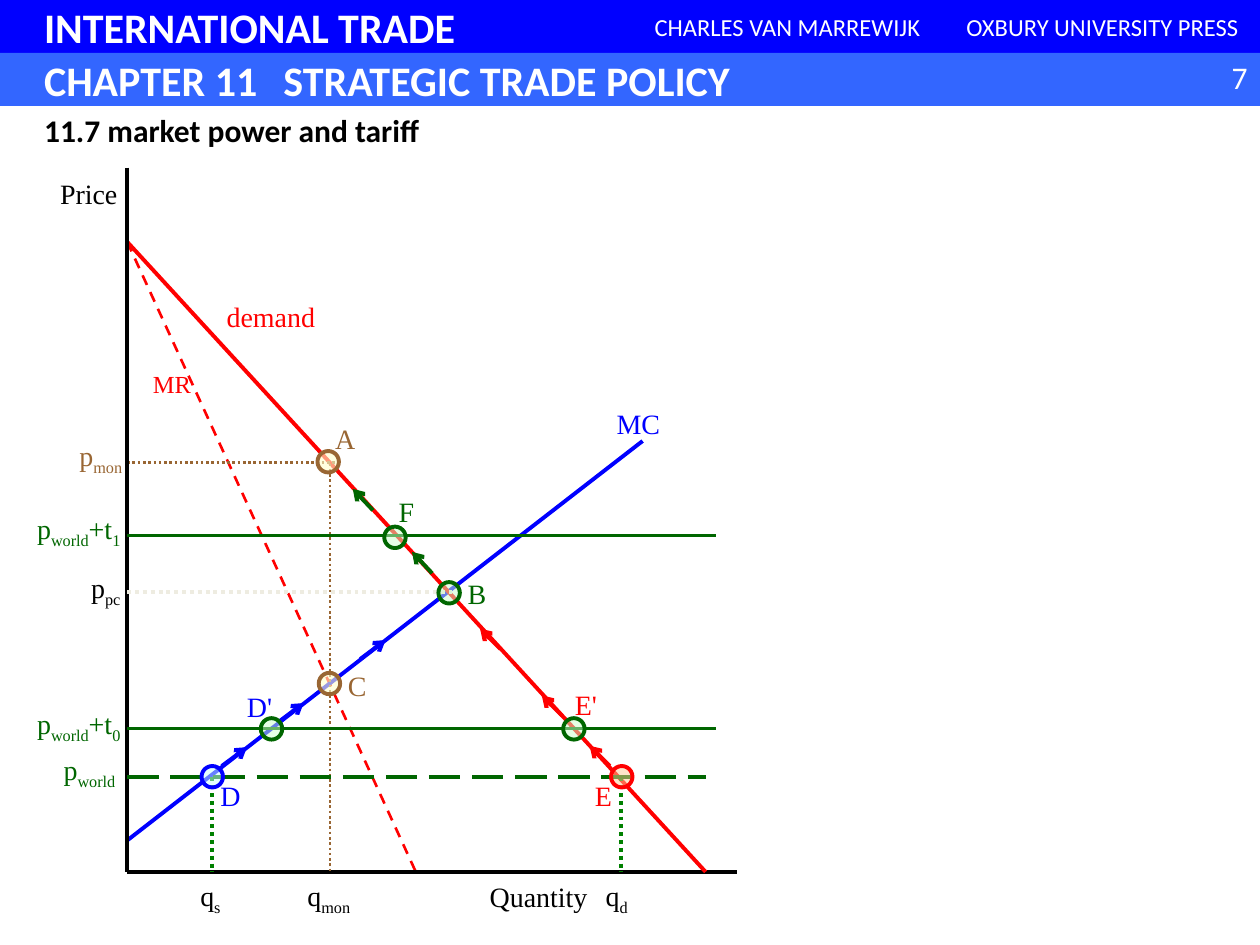
from dataclasses import dataclass
from lxml.etree import SubElement
from pptx import Presentation
from pptx.dml.color import RGBColor
from pptx.enum.dml import MSO_LINE as Dash
from pptx.enum.shapes import MSO_CONNECTOR as Link, MSO_SHAPE as Kind
from pptx.enum.text import MSO_ANCHOR as Anchor, MSO_AUTO_SIZE as Fit, PP_ALIGN as Align
from pptx.oxml.ns import qn
from pptx.util import Inches, Pt


@dataclass(frozen=True)
class Theme:
    head: str = "Calibri"
    body: str = "Times New Roman"
    black: str = "000000"
    white: str = "FFFFFF"
    blue: str = "0000FF"
    sky: str = "3366FF"
    red: str = "FF0000"
    green: str = "006600"
    leaf: str = "008000"
    brown: str = "996633"
    sand: str = "EEECE1"
    cream: str = "FFFFCC"
    mint: str = "CCFFCC"
    aqua: str = "CCFFFF"
    peach: str = "FFCC99"
    banner: int = 24
    title: int = 18
    credit: int = 14
    label: int = 16
    small: int = 14
    thin: float = 1.5
    thick: float = 2.25


T = Theme()


def write(frame, text, size, color, font, align, bold=False):
    para = frame.paragraphs[0]
    para.alignment = align
    for i, part in enumerate(text.split("_")):
        if part:
            run = para.add_run()
            run.text = part
            run.font.name = font
            run.font.size = Pt(size)
            run.font.bold = bold
            run.font.color.rgb = RGBColor.from_string(color)
            if i % 2:
                run._r.get_or_add_rPr().set("baseline", "-25000")
    return para


def box(at, wrap):
    frame = slide.shapes.add_textbox(*map(Inches, at)).text_frame
    frame.word_wrap = wrap
    frame.auto_size = Fit.SHAPE_TO_FIT_TEXT
    return frame


deck = Presentation()
deck.slide_width, deck.slide_height = Inches(10), Inches(7.5)
slide = deck.slides.add_slide(deck.slide_layouts[5])

bars = [
    ((0, 0, 10, 0.42), T.blue, "INTERNATIONAL TRADE", T.banner, True),
    ((5, 0, 2.5, 0.42), T.blue, "CHARLES VAN MARREWIJK", T.credit, False),
    ((7.5, 0, 2.5, 0.42), T.blue, "OXBURY UNIVERSITY PRESS", T.credit, False),
    ((0, 0.42, 10, 0.42), T.sky, "CHAPTER 11\tSTRATEGIC TRADE POLICY", T.banner, True),
]
for at, fill, text, size, bold in bars:
    bar = slide.shapes.add_shape(Kind.RECTANGLE, *map(Inches, at))
    bar.shadow.inherit = False
    bar.fill.solid()
    bar.fill.fore_color.rgb = RGBColor.from_string(fill)
    bar.line.fill.background()
    frame = bar.text_frame
    frame.vertical_anchor = Anchor.MIDDLE
    frame.word_wrap = True
    if bold:
        frame.margin_left = Inches(0.35)
    align = Align.LEFT if bold else Align.CENTER
    para = write(frame, text, size, T.white, T.head, align, bold)
    if "\t" in text:
        tabs = SubElement(para._p.get_or_add_pPr(), qn("a:tabLst"))
        SubElement(tabs, qn("a:tab"), pos=str(Inches(1.9)), algn="l")

write(box((9.33, 0.41, 0.67, 0.4), True), "7", T.title, T.white, T.head, Align.RIGHT)

title = slide.shapes.title
title.left, title.top = Inches(0.25), Inches(0.83)
title.width, title.height = Inches(7.83), Inches(0.4)
title.text_frame.vertical_anchor = Anchor.TOP
title.text_frame.auto_size = Fit.NONE
write(title.text_frame, "11.7 market power and tariff", T.title, T.black, T.head, Align.LEFT, True)

left, base, top = 1.01, 6.92, 1.92
dot = Dash.ROUND_DOT
lines = [
    (left, top, 3.3, base, T.red, T.thin, Dash.DASH),
    (left, 6.67, 5.1, 3.5, T.blue, T.thick, None),
    (left, base, 5.85, base, T.black, T.thick, None),
    (left, top, 5.6, base, T.red, T.thick, None),
    (2.62, 3.68, 2.62, base, T.brown, T.thin, dot),
    (left, 3.67, 2.68, 3.67, T.brown, T.thin, dot),
    (left, 1.33, left, base, T.black, T.thick, None),
    (left, 4.7, 3.59, 4.7, T.sand, T.thick, dot),
    (4.93, 6.17, 4.93, base, T.leaf, T.thick, dot),
    (1.68, 6.17, 1.68, base, T.leaf, T.thick, dot),
    (left, 6.17, 5.6, 6.17, T.green, T.thick, Dash.LONG_DASH),
    (left, 4.25, 5.68, 4.25, T.green, T.thin, None),
    (left, 5.78, 5.68, 5.78, T.green, T.thin, None),
]
moves = [
    (T.blue, 0.2, -0.15, [(1.76, 6.08), (2.21, 5.73), (2.86, 5.23)]),
    (T.red, -0.16, -0.16, [(4.84, 6.08), (4.46, 5.68), (3.97, 5.15)]),
    (T.green, -0.16, -0.17, [(3.43, 4.55), (2.96, 4.05)]),
]
for color, dx, dy, starts in moves:
    for x, y in starts:
        lines.append((x, y, x + dx, y + dy, color, T.thick, "arrow"))

for x1, y1, x2, y2, color, width, style in lines:
    line = slide.shapes.add_connector(Link.STRAIGHT, *map(Inches, (x1, y1, x2, y2)))
    line.line.color.rgb = RGBColor.from_string(color)
    line.line.width = Pt(width)
    if style == "arrow":
        SubElement(line.line._get_or_add_ln(), qn("a:tailEnd"), type="arrow")
    elif style:
        line.line.dash_style = style
    SubElement(line._element.spPr, qn("a:effectLst"))

size = 0.17
rings = [
    (2.52, 3.58, T.cream, 60, T.brown),
    (2.53, 5.34, T.cream, 60, T.brown),
    (3.48, 4.62, T.mint, 50, T.green),
    (1.6, 6.08, T.aqua, 50, T.blue),
    (4.85, 6.08, T.peach, 50, T.red),
    (3.05, 4.18, T.mint, 50, T.green),
    (2.07, 5.7, T.mint, 50, T.green),
    (4.47, 5.7, T.mint, 50, T.green),
]
for x, y, fill, alpha, color in rings:
    ring = slide.shapes.add_shape(Kind.OVAL, *map(Inches, (x, y, size, size)))
    ring.shadow.inherit = False
    ring.fill.solid()
    ring.fill.fore_color.rgb = RGBColor.from_string(fill)
    tint = ring._element.spPr.find(qn("a:solidFill"))[0]
    SubElement(tint, qn("a:alpha"), val=str(alpha * 1000))
    ring.line.color.rgb = RGBColor.from_string(color)
    ring.line.width = Pt(T.thick)

labels = [
    ("Price", 0.32, 1.35, 0.77, T.black),
    ("Quantity", 3.71, 6.93, 1.13, T.black),
    ("demand", 1.6, 2.33, 1.1, T.red),
    ("MR", 1.11, 2.88, 0.51, T.red),
    ("MC", 4.77, 3.18, 0.59, T.blue),
    ("q_s_", 1.46, 6.92, 0.42, T.black),
    ("q_mon_", 2.28, 6.92, 0.66, T.black),
    ("q_d_", 4.68, 6.92, 0.43, T.black),
    ("p_mon_", 0.51, 3.43, 0.58, T.brown),
    ("p_world_+t_1_", 0.16, 4.01, 0.93, T.green),
    ("p_pc_", 0.61, 4.48, 0.46, T.black),
    ("p_world_+t_0_", 0.16, 5.56, 0.93, T.green),
    ("p_world_", 0.38, 5.92, 0.66, T.green),
    ("A", 2.56, 3.3, 0.36, T.brown),
    ("B", 3.61, 4.53, 0.35, T.green),
    ("C", 2.66, 5.26, 0.35, T.brown),
    ("D", 1.65, 6.13, 0.36, T.blue),
    ("D'", 1.86, 5.42, 0.4, T.blue),
    ("E", 4.62, 6.13, 0.34, T.red),
    ("E'", 4.46, 5.41, 0.38, T.red),
    ("F", 3.06, 3.88, 0.33, T.green),
]
for text, x, y, width, color in labels:
    points = T.small if text == "MR" else T.label
    write(box((x, y, width, 0.37), False), text, points, color, T.body, Align.CENTER)

deck.save("out.pptx")
